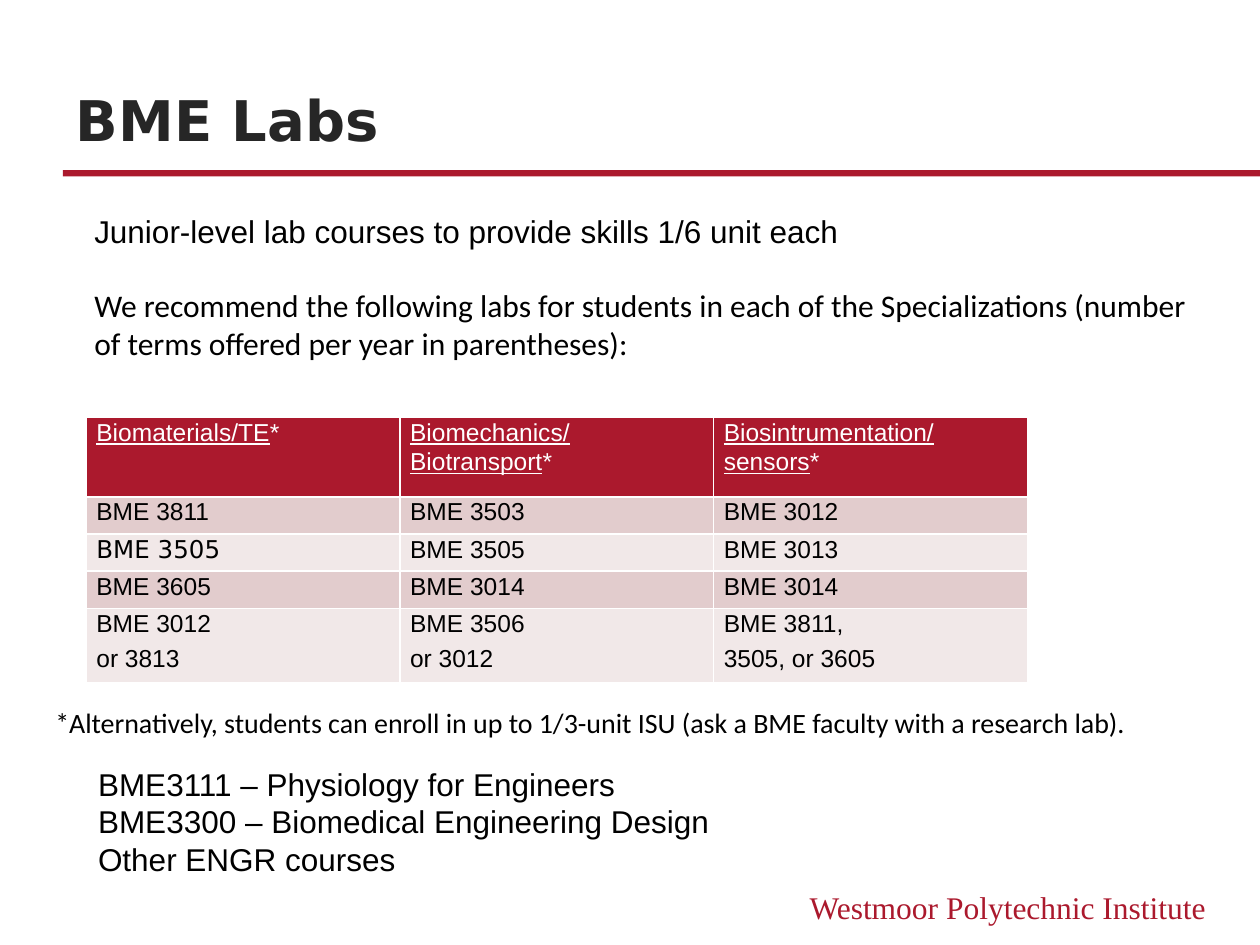
from lxml.etree import SubElement
from pptx import Presentation
from pptx.dml.color import RGBColor
from pptx.enum.shapes import MSO_SHAPE
from pptx.enum.text import MSO_ANCHOR, PP_ALIGN
from pptx.oxml.ns import qn
from pptx.util import Inches, Pt

WIDE, HIGH = Inches(10), Inches(7.5)
RED, WHITE, BLACK, DARK = "AB192D", "FFFFFF", "000000", "262626"
BANDS = "E2CCCD", "F1E8E8"

TITLE = {"name": "DejaVu Sans", "size": Pt(32), "bold": True}
BODY = {"name": "Arial", "size": Pt(18)}
LEAD = {"name": "Calibri", "size": Pt(18)}
NOTE = {"name": "Calibri", "size": Pt(16)}
SIGN = {"name": "Times New Roman", "size": Pt(18)}
CELL = {"name": "Arial", "size": Pt(14)}

HEADS = ["Biomaterials/TE", "Biomechanics/ Biotransport", "Biosintrumentation/sensors"]
LABS = [
    ["BME 3811", "BME 3503", "BME 3012"],
    ["BME 3505", "BME 3505", "BME 3013"],
    ["BME 3605", "BME 3014", "BME 3014"],
    ["BME 3012\nor 3813", "BME 3506\nor 3012", "BME 3811,\n3505, or 3605"],
]
ROWS = [0.3, 0.14, 0.14, 0.14, 0.28]  # shares of the table's height


def color(code):
    return RGBColor.from_string(code)


def area(left, top, width, height):
    """Turn percentages of the slide into a box."""
    return [int(part * size / 100) for part, size in
            zip((left, top, width, height), (WIDE, HIGH) * 2)]


def add_run(para, text, style, code=BLACK):
    run = para.add_run()
    run.text = text
    for key, value in style.items():
        setattr(run.font, key, value)
    run.font.color.rgb = color(code)


def add_title(slide, box, text):
    title = slide.shapes.title
    title.left, title.top, title.width, title.height = box
    frame = title.text_frame
    frame.vertical_anchor = MSO_ANCHOR.BOTTOM
    para = frame.paragraphs[0]
    para.alignment = PP_ALIGN.LEFT
    add_run(para, text, TITLE, DARK)


def add_rule(slide, box):
    bar = slide.shapes.add_shape(MSO_SHAPE.RECTANGLE, *box)
    bar.shadow.inherit = False
    bar.fill.solid()
    bar.fill.fore_color.rgb = color(RED)
    bar.line.fill.background()


def add_text(slide, box, lines, code=BLACK, align=PP_ALIGN.LEFT, gap=0):
    """Write (text, style) lines with a gap in points between them."""
    frame = slide.shapes.add_textbox(*box).text_frame
    frame.word_wrap = True
    for at, (text, style) in enumerate(lines):
        para = frame.paragraphs[0] if at == 0 else frame.add_paragraph()
        para.alignment = align
        para.space_before = Pt(gap if at else 0)
        add_run(para, text, style, code)


def add_edges(cell):
    props = cell._tc.get_or_add_tcPr()
    for at, side in enumerate(("lnL", "lnR", "lnT", "lnB")):
        line = props.makeelement(qn("a:" + side), {"w": str(Pt(1))})
        fill = SubElement(line, qn("a:solidFill"))
        SubElement(fill, qn("a:srgbClr"), val=WHITE)
        props.insert(at, line)


def fill_cell(cell, code, lines):
    """Write lines, each a list of (text, style, colour) runs."""
    cell.fill.solid()
    cell.fill.fore_color.rgb = color(code)
    margins = {"margin_left": 0.08, "margin_right": 0.08,
               "margin_top": 0, "margin_bottom": 0}
    for key, value in margins.items():
        setattr(cell, key, Inches(value))
    add_edges(cell)
    frame = cell.text_frame
    for at, runs in enumerate(lines):
        para = frame.paragraphs[0] if at == 0 else frame.add_paragraph()
        para.line_spacing, para.space_after = 1.07, Pt(3)
        for run in runs:
            add_run(para, *run)


def add_labs(slide, box):
    table = slide.shapes.add_table(len(ROWS), len(HEADS), *box).table
    for col in table.columns:
        col.width = box[2] // len(HEADS)
    for row, share in zip(table.rows, ROWS):
        row.height = int(box[3] * share)
    for x, head in enumerate(HEADS):
        runs = [(head, {**CELL, "underline": True}, WHITE), ("*", CELL, WHITE)]
        fill_cell(table.cell(0, x), RED, [runs])
    for y, labs in enumerate(LABS):
        for x, lab in enumerate(labs):
            style = {**CELL, "name": "DejaVu Sans"} if (y, x) == (1, 0) else CELL
            lines = [[(line, style)] for line in lab.split("\n")]
            fill_cell(table.cell(y + 1, x), BANDS[y % 2], lines)


def main():
    deck = Presentation()
    deck.slide_width, deck.slide_height = WIDE, HIGH
    slide = deck.slides.add_slide(deck.slide_layouts[5])
    add_rule(slide, area(5, 18, 95, 0.67))
    add_text(slide, area(60, 93.33, 36.7, 5.33),
             [("Westmoor Polytechnic Institute", SIGN)], RED, PP_ALIGN.RIGHT)
    add_title(slide, area(5, 5.07, 90, 11.73), "BME Labs")
    add_labs(slide, area(6.85, 44.13, 74.7, 28.13))
    add_text(slide, area(6.5, 21.73, 90.6, 19.73), [
        ("Junior-level lab courses to provide skills 1/6 unit each", BODY),
        ("We recommend the following labs for students in each of the "
         "Specializations (number of terms offered per year in parentheses):", LEAD),
    ], gap=21)
    add_text(slide, area(3.4, 74, 93.2, 4.93), [
        ("*Alternatively, students can enroll in up to 1/3-unit ISU "
         "(ask a BME faculty with a research lab).", NOTE)])
    courses = ["BME3111 – Physiology for Engineers",
               "BME3300 – Biomedical Engineering Design", "Other ENGR courses"]
    add_text(slide, area(6.8, 80.27, 90.6, 13.47),
             [(course, BODY) for course in courses])
    deck.save("out.pptx")


if __name__ == "__main__":
    main()
